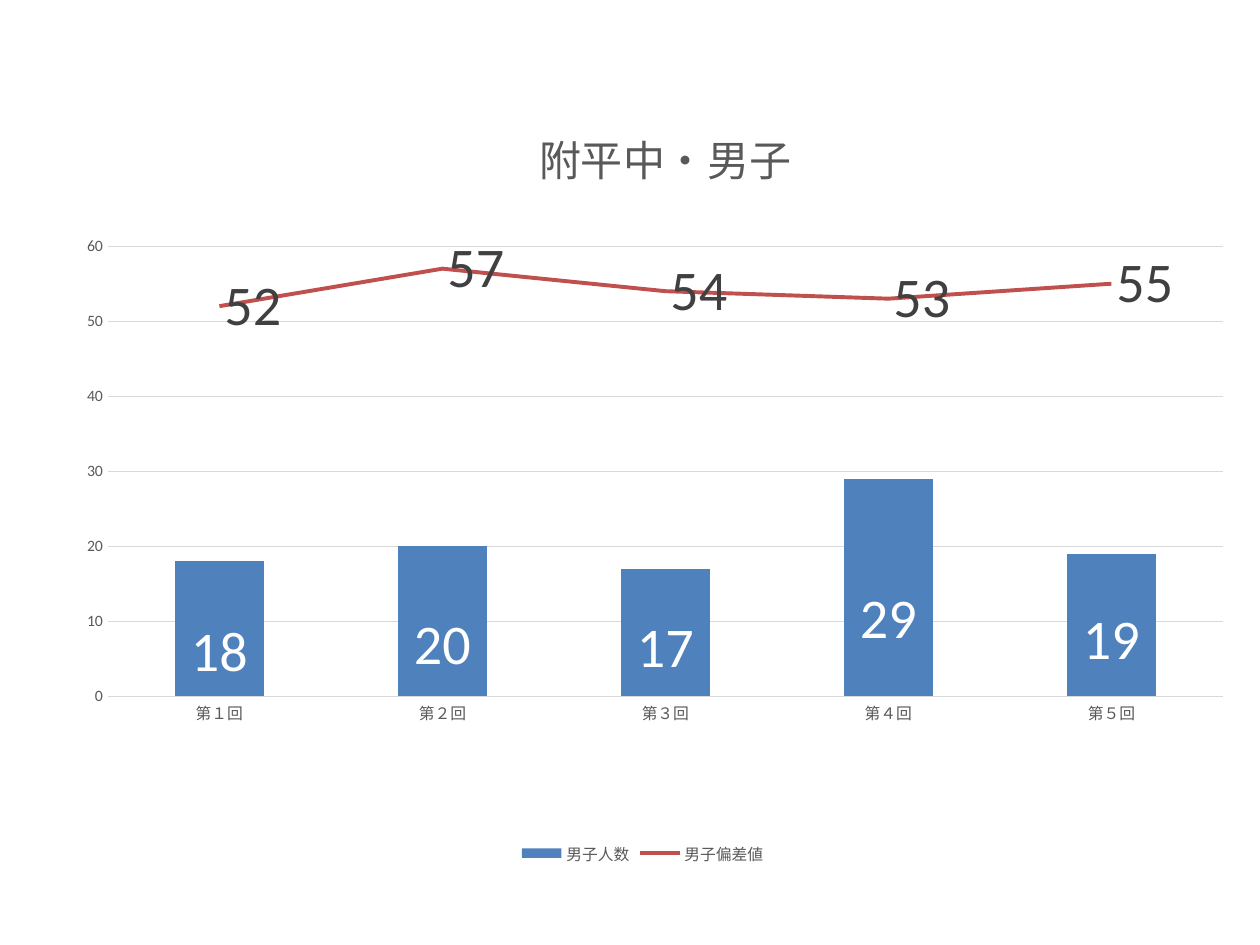
from dataclasses import dataclass

from lxml import etree
from pptx import Presentation
from pptx.chart.data import CategoryChartData
from pptx.dml.color import RGBColor
from pptx.enum.chart import (XL_CHART_TYPE, XL_LABEL_POSITION, XL_LEGEND_POSITION,
                             XL_MARKER_STYLE, XL_TICK_MARK)
from pptx.oxml import parse_xml
from pptx.oxml.ns import nsdecls, qn
from pptx.util import Pt

COLUMN = XL_CHART_TYPE.COLUMN_CLUSTERED
CENTER = XL_LABEL_POSITION.CENTER
RIGHT = XL_LABEL_POSITION.RIGHT
BOTTOM = XL_LEGEND_POSITION.BOTTOM
NO_MARKER = XL_MARKER_STYLE.NONE
NO_TICK = XL_TICK_MARK.NONE


@dataclass(frozen=True)
class Theme:
    font: str = "Calibri"
    bar: str = "4F81BD"
    line: str = "C0504D"
    grid: str = "D9D9D9"
    text: str = "595959"
    bar_label: str = "FFFFFF"
    line_label: str = "404040"
    small: float = 9
    base: float = 10
    title: float = 24
    label: float = 32
    hairline: float = 0.75
    thick: float = 2.25


def layout_xml(**settings):
    children = "".join(f'<c:{name} val="{value}"/>' for name, value in settings.items())
    return parse_xml(f'<c:layout {nsdecls("c")}><c:manualLayout>{children}'
                     '</c:manualLayout></c:layout>')


def set_layout(parent, position, **settings):
    for existing in parent.findall(qn("c:layout")):
        parent.remove(existing)
    parent.insert(position, layout_xml(**settings))


class SlideBuilder:
    def __init__(self, slide, theme):
        self.slide = slide
        self.theme = theme

    def style_font(self, font, size, color):
        font.name = self.theme.font
        font.size = Pt(size)
        font.bold = False
        font.color.rgb = RGBColor.from_string(color)

    def style_line(self, line, color, width):
        line.color.rgb = RGBColor.from_string(color)
        line.width = Pt(width)

    def style_label(self, label, color, position):
        self.style_font(label.font, self.theme.label, color)
        label.position = position

    def add_chart(self, categories, series, left, top, width, height):
        data = CategoryChartData(number_format="General")
        data.categories = categories
        for name, values in series.items():
            data.add_series(name, values)
        frame = self.slide.shapes.add_chart(
            COLUMN, Pt(left), Pt(top), Pt(width), Pt(height), data)
        chart = frame.chart
        chart.font.name = self.theme.font
        chart.font.size = Pt(self.theme.base)
        chart.has_legend = True
        chart.legend.position = BOTTOM
        chart.legend.include_in_layout = False
        self.style_font(chart.legend.font, self.theme.small, self.theme.text)
        plot_area = chart.element.find(".//" + qn("c:plotArea"))
        set_layout(plot_area, 0, layoutTarget="inner", xMode="edge", yMode="edge",
                   x=0.067, y=0.215, w=0.903, h=0.567)
        return chart

    def title_chart(self, chart, text, x, y):
        chart.has_title = True
        run = chart.chart_title.text_frame.paragraphs[0].add_run()
        run.text = text
        self.style_font(run.font, self.theme.title, self.theme.text)
        title = chart.element.find(".//" + qn("c:title"))
        set_layout(title, 1, xMode="edge", yMode="edge", x=x, y=y)

    def style_axes(self, chart, maximum, step):
        theme = self.theme
        for axis in (chart.category_axis, chart.value_axis):
            axis.major_tick_mark = NO_TICK
            axis.minor_tick_mark = NO_TICK
            self.style_font(axis.tick_labels.font, theme.small, theme.text)
        self.style_line(chart.category_axis.format.line, theme.grid, theme.hairline)
        value_axis = chart.value_axis
        value_axis.minimum_scale = 0
        value_axis.maximum_scale = maximum
        value_axis.major_unit = step
        value_axis.format.line.fill.background()
        self.style_line(value_axis.major_gridlines.format.line, theme.grid, theme.hairline)

    def move_last_series_to_line(self, chart):
        bars = chart.element.find(".//" + qn("c:barChart"))
        series = bars.findall(qn("c:ser"))[-1]
        for setting in series.findall(qn("c:invertIfNegative")):
            series.remove(setting)
        lines = parse_xml(f'<c:lineChart {nsdecls("c")}><c:grouping val="standard"/>'
                          '<c:varyColors val="0"/></c:lineChart>')
        lines.append(series)
        etree.SubElement(lines, qn("c:marker")).set("val", "1")
        for axis in bars.findall(qn("c:axId")):
            etree.SubElement(lines, qn("c:axId")).set("val", axis.get("val"))
        bars.addnext(lines)

    def style_bars(self, chart, plot, label_drops):
        plot.gap_width = 150
        plot.vary_by_categories = False
        series = plot.series[0]
        series.invert_if_negative = False
        series.format.fill.solid()
        series.format.fill.fore_color.rgb = RGBColor.from_string(self.theme.bar)
        series.data_labels.show_value = True
        self.style_label(series.data_labels, self.theme.bar_label, CENTER)
        for index in range(len(label_drops)):
            self.style_label(series.points[index].data_label, self.theme.bar_label, CENTER)
        labels = chart.element.findall(".//" + qn("c:dLbl"))
        for label, drop in zip(labels, label_drops):
            set_layout(label, 1, x=0, y=drop)

    def style_line_plot(self, plot):
        series = plot.series[0]
        series.smooth = False
        series.marker.style = NO_MARKER
        self.style_line(series.format.line, self.theme.line, self.theme.thick)
        series.data_labels.show_value = True
        self.style_label(series.data_labels, self.theme.line_label, RIGHT)


def main():
    presentation = Presentation()
    presentation.slide_width = Pt(720)
    presentation.slide_height = Pt(540)
    slide = presentation.slides.add_slide(presentation.slide_layouts[6])
    builder = SlideBuilder(slide, Theme())
    chart = builder.add_chart(
        [f"第{number}回" for number in "１２３４５"],
        {"男子人数": (18, 20, 17, 29, 19), "男子偏差値": (52, 57, 54, 53, 55)},
        left=14.4, top=43.2, width=705.6, height=453.6)
    builder.title_chart(chart, "附平中・男子", x=0.41, y=0.05)
    builder.style_axes(chart, maximum=60, step=10)
    builder.move_last_series_to_line(chart)
    bar_plot, line_plot = chart.plots
    builder.style_bars(chart, bar_plot, label_drops=(0.03, 0.03, 0.02, 0.04, 0.02))
    builder.style_line_plot(line_plot)
    presentation.save("out.pptx")


if __name__ == "__main__":
    main()
